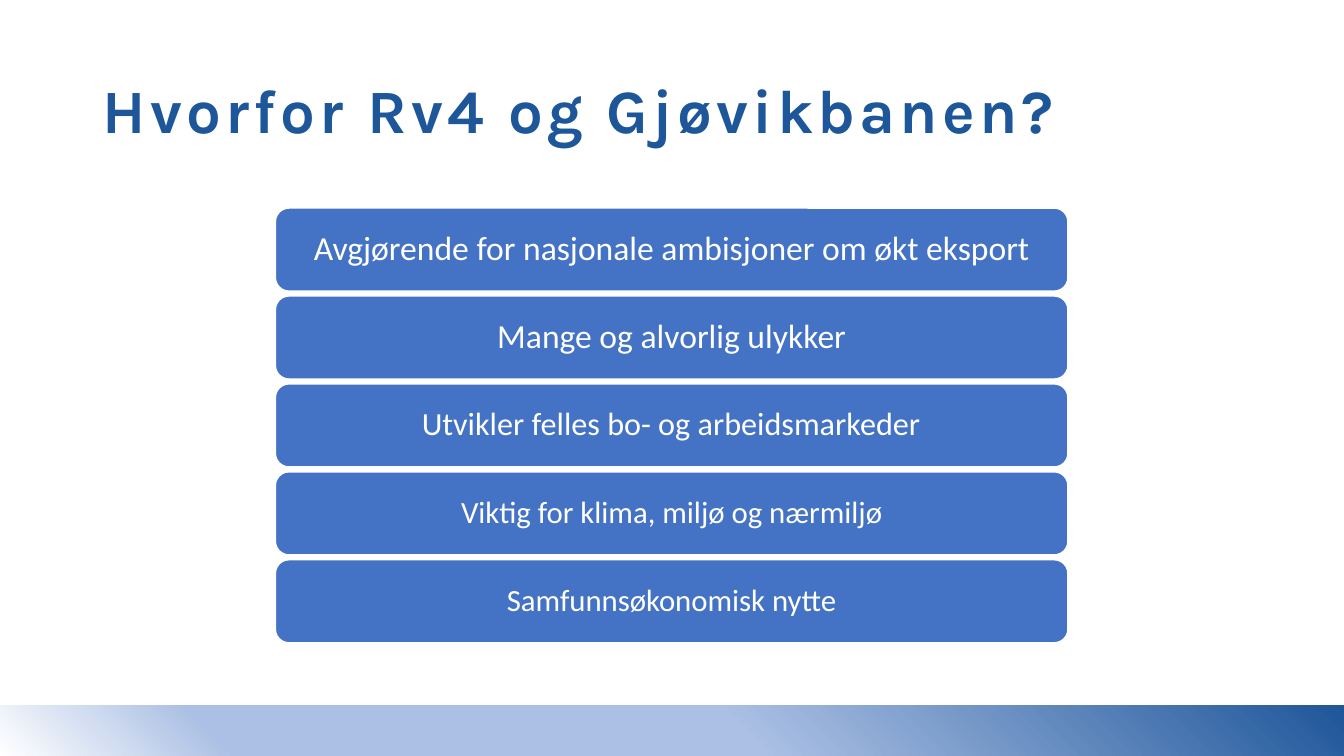
"""Build the slide explaining why Rv4 and Gjøvikbanen matter."""
from dataclasses import dataclass

from pptx import Presentation
from pptx.dml.color import RGBColor
from pptx.enum.shapes import MSO_SHAPE as SHAPE
from pptx.enum.text import MSO_ANCHOR as ANCHOR, MSO_AUTO_SIZE as FIT, PP_ALIGN as ALIGN
from pptx.oxml import parse_xml
from pptx.oxml.ns import nsdecls, qn
from pptx.util import Pt

COLORS = {"navy": "1E569A", "pale": "ABC0E4", "box": "4472C4", "white": "FFFFFF"}
BAND_STOPS = [(0, "navy"), (45, "pale"), (83, "pale"), (100, "white")]
BOX_LEFT, BOX_TOP, BOX_WIDTH, BOX_HEIGHT, BOX_PITCH = 196.5, 148.4, 566.6, 59.8, 62.8


@dataclass(frozen=True)
class Reason:
    """One argument and its text size in points."""

    text: str
    size: float


REASONS = [
    Reason("Avgjørende for nasjonale ambisjoner om økt eksport", 24),
    Reason("Mange og alvorlig ulykker", 24),
    Reason("Utvikler felles bo- og arbeidsmarkeder", 23),
    Reason("Viktig for klima, miljø og nærmiljø", 22),
    Reason("Samfunnsøkonomisk nytte", 22),
]


def color(name: str) -> RGBColor:
    """Look up a named colour."""
    return RGBColor.from_string(COLORS[name])


def write(s, text: str, fill: str, align: ALIGN, font: dict):
    """Fill a shape with one formatted line and return its run."""
    tf = s.text_frame
    frame = {"word_wrap": True, "auto_size": FIT.NONE, "vertical_anchor": ANCHOR.MIDDLE}
    for key, value in frame.items():
        setattr(tf, key, value)
    p = tf.paragraphs[0]
    p.alignment, p.line_spacing = align, 0.9
    r = p.add_run()
    r.text = text
    for key, value in font.items():
        setattr(r.font, key, value)
    r.font.color.rgb = color(fill)
    return r


def add_band(slide) -> None:
    """Draw the gradient band along the bottom edge."""
    s = slide.shapes.add_shape(SHAPE.RECTANGLE, Pt(462), Pt(42.3), Pt(36.6), Pt(960))
    s.rotation = 90
    s.shadow.inherit = False
    s.line.fill.background()
    stops = "".join(
        f'<a:gs pos="{pos * 1000}"><a:srgbClr val="{COLORS[name]}"/></a:gs>'
        for pos, name in BAND_STOPS
    )
    gradient = parse_xml(
        f'<a:gradFill {nsdecls("a")} rotWithShape="1"><a:gsLst>{stops}</a:gsLst>'
        '<a:path path="circle"><a:fillToRect l="100000" b="100000"/></a:path></a:gradFill>'
    )
    s._element.spPr.find(qn("a:prstGeom")).addnext(gradient)


def add_title(slide, text: str) -> None:
    """Place and format the title."""
    s = slide.shapes.title
    place = {"left": Pt(66), "top": Pt(28.8), "width": Pt(828), "height": Pt(104.4)}
    for key, value in place.items():
        setattr(s, key, value)
    r = write(s, text, "navy", ALIGN.LEFT, {"name": "Karla", "size": Pt(44), "bold": True})
    r._r.get_or_add_rPr().set("spc", "300")


def add_reason(slide, row: int, reason: Reason) -> None:
    """Draw one rounded box in the stack."""
    s = slide.shapes.add_shape(
        SHAPE.ROUNDED_RECTANGLE,
        Pt(BOX_LEFT), Pt(BOX_TOP + row * BOX_PITCH), Pt(BOX_WIDTH), Pt(BOX_HEIGHT),
    )
    s.shadow.inherit = False
    s.fill.solid()
    s.fill.fore_color.rgb = color("box")
    s.line.color.rgb = color("white")
    s.line.width = Pt(1.5)
    write(s, reason.text, "white", ALIGN.CENTER, {"name": "Calibri", "size": Pt(reason.size)})


def main() -> None:
    """Create and save the presentation."""
    prs = Presentation()
    prs.slide_width, prs.slide_height = Pt(960), Pt(540)
    slide = prs.slides.add_slide(prs.slide_layouts.get_by_name("Title Only"))
    add_band(slide)
    add_title(slide, "Hvorfor Rv4 og Gjøvikbanen?")
    for row, reason in enumerate(REASONS):
        add_reason(slide, row, reason)
    prs.save("out.pptx")


if __name__ == "__main__":
    main()
